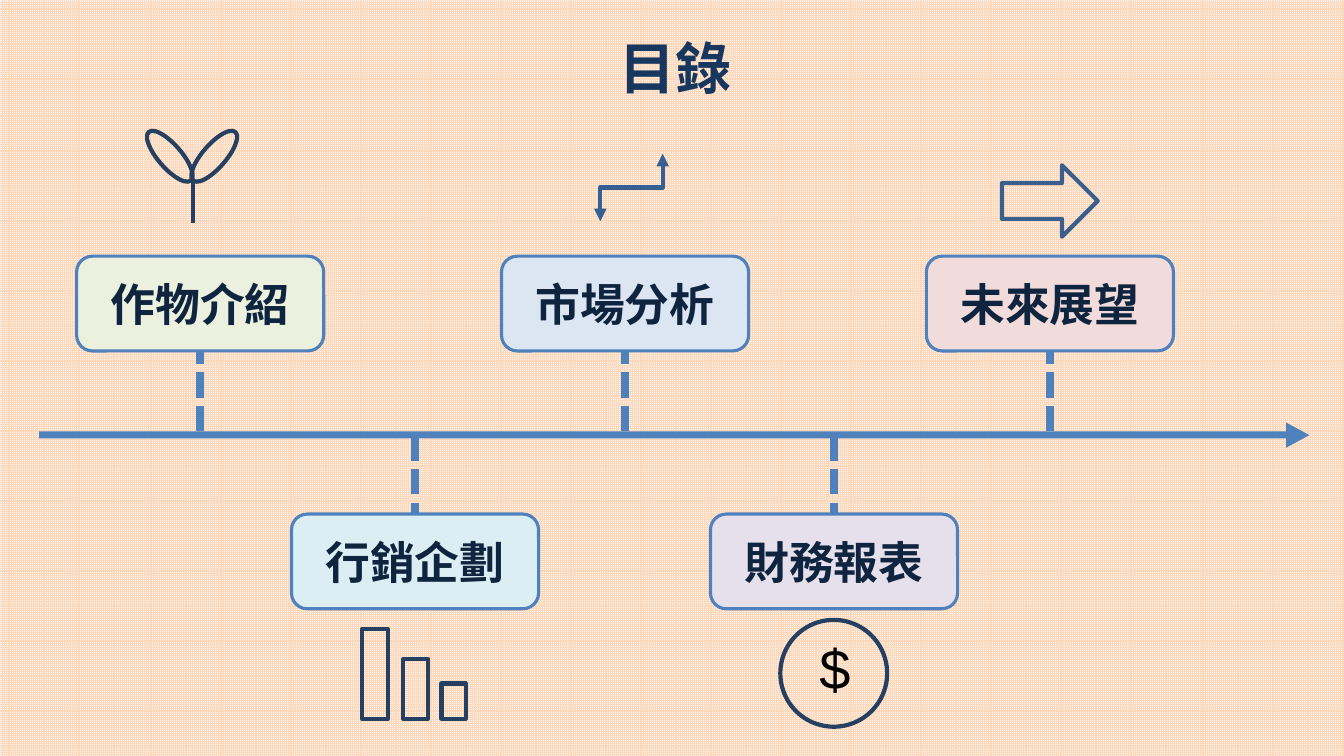
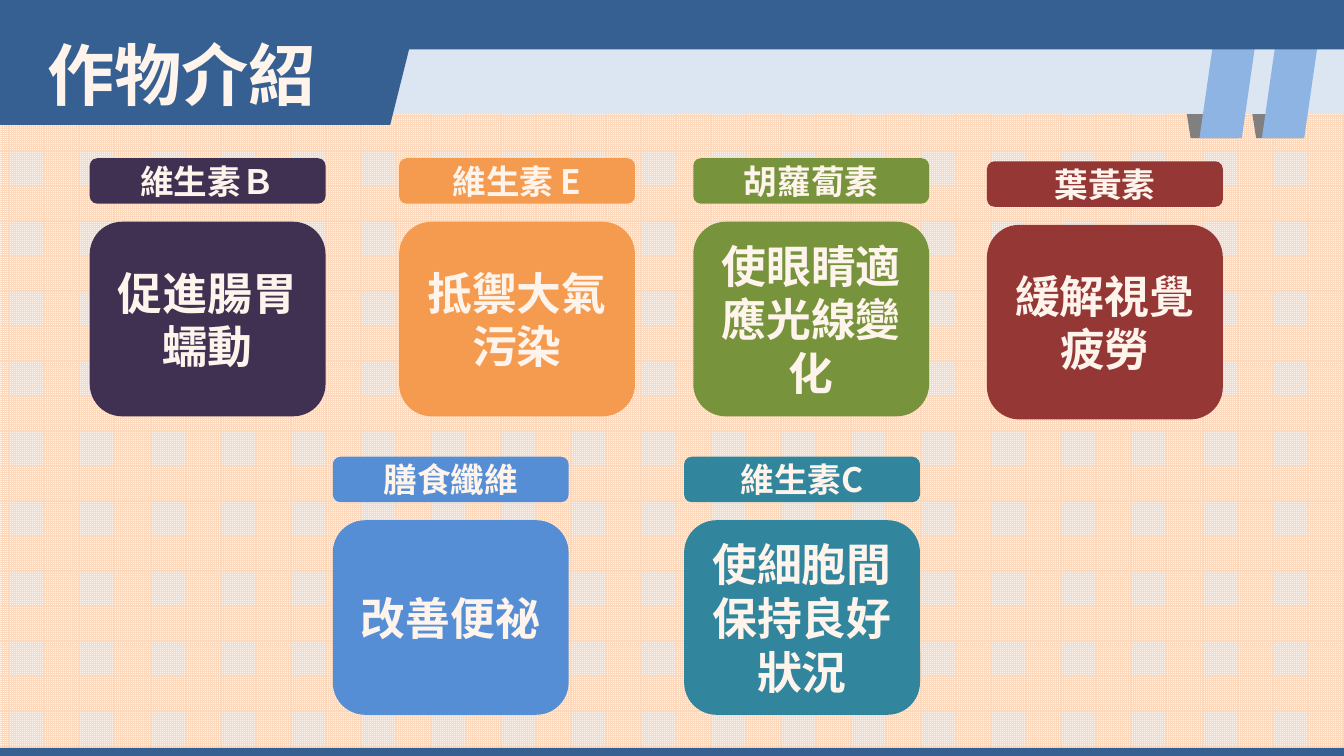
"""Build a contents timeline and a crop introduction slide."""
from dataclasses import dataclass
from lxml.etree import SubElement
from pptx import Presentation
from pptx.dml.color import RGBColor
from pptx.enum.dml import MSO_LINE, MSO_PATTERN
from pptx.enum.shapes import MSO_CONNECTOR, MSO_SHAPE
from pptx.enum.text import MSO_ANCHOR, MSO_AUTO_SIZE, PP_ALIGN
from pptx.oxml.ns import qn
from pptx.util import Pt


@dataclass(frozen=True)
class Theme:
    cjk: str = "Noto Sans CJK SC"
    latin: str = "Arial"
    grid: str = "FCD9BD"
    cream: str = "FEF4EC"
    navy: str = "17375E"
    ink: str = "0F243E"
    black: str = "000000"
    axis: str = "4F81BD"
    icon: str = "254061"
    arrow: str = "3A5F8C"
    band: str = "376092"
    pale: str = "DCE6F2"
    ribbon: str = "8EB4E3"
    fold: str = "808080"
    contents_size: int = 40
    section_size: int = 48
    card_size: int = 32
    tag_size: int = 24
    card_line: float = 2.25
    icon_line: float = 3
    stem_line: float = 6


THEME = Theme()
SLIDE_W, SLIDE_H = 960, 540

CONTENTS = "目錄"
TOPIC_W, TOPIC_H = 176.5, 67.7
TOPIC_ROWS = [
    dict(top=183, left=54.7, step=303.5, axis_y=308, side=2,
         topics=[("作物介紹", "EBF1DE"), ("市場分析", "DCE6F2"), ("未來展望", "F2DCDB")]),
    dict(top=367.2, left=208.2, step=299.3, axis_y=311, side=0,
         topics=[("行銷企劃", "DBEEF4"), ("財務報表", "E6E0EC")]),
]
LEAVES = [(113, 319), (144.7, 41)]
BAR_BASE = 513.4
BARS = [(258.5, 18.7, 64), (288, 18, 42.5), (315.4, 17.3, 25.2)]

SECTION = "作物介紹"
NUTRIENT_W, TAG_H, EFFECT_H, EFFECT_DROP = 168.5, 32.5, 139, 45.4
NUTRIENTS = [
    ("維生素Ｂ", "促進腸胃蠕動", "403152", 64.1, 113),
    ("維生素 E", "抵禦大氣污染", "F59B4F", 285.1, 113),
    ("胡蘿蔔素", "使眼睛適應光線變化", "77933C", 495.2, 113),
    ("葉黃素", "緩解視覺疲勞", "953735", 705, 115.2),
    ("膳食纖維", "改善便祕", "558ED5", 237.7, 326.2),
    ("維生素C", "使細胞間保持良好狀況", "31859C", 488.7, 326.2),
]
FOLDS = (886.3, 839.5)
RIBBONS = (856.8, 901.4)


def assign(target, formats):
    for attribute, setting in formats.items():
        setattr(target, attribute, setting)


def rgb(colour):
    return RGBColor.from_string(colour)


def write(shape, text, size, colour, font=THEME.cjk, bold=True, centred=True):
    if centred:
        frame_format = dict(word_wrap=True, vertical_anchor=MSO_ANCHOR.MIDDLE)
    else:
        frame_format = dict(word_wrap=False, vertical_anchor=MSO_ANCHOR.TOP,
                            auto_size=MSO_AUTO_SIZE.SHAPE_TO_FIT_TEXT)
    assign(shape.text_frame, frame_format)
    paragraph = shape.text_frame.paragraphs[0]
    paragraph.alignment = PP_ALIGN.CENTER if centred else PP_ALIGN.LEFT
    run = paragraph.add_run()
    run.text = text
    assign(run.font, dict(size=Pt(size), bold=bold, name=font))
    run.font.color.rgb = rgb(colour)
    SubElement(run.font._element, qn("a:ea"), typeface=font)


def draw(slide, kind, box, fill=None, line=None, width=THEME.icon_line, rotation=0):
    shape = slide.shapes.add_shape(kind, *map(Pt, box))
    shape.shadow.inherit = False
    shape.rotation = rotation
    if fill:
        shape.fill.solid()
        shape.fill.fore_color.rgb = rgb(fill)
    else:
        shape.fill.background()
    if line:
        shape.line.color.rgb = rgb(line)
        shape.line.width = Pt(width)
    else:
        shape.line.fill.background()
    return shape


def connect(slide, start, end, colour, width, kind=MSO_CONNECTOR.STRAIGHT):
    connector = slide.shapes.add_connector(kind, *map(Pt, start + end))
    connector.line.color.rgb = rgb(colour)
    connector.line.width = Pt(width)
    SubElement(connector._element.spPr, qn("a:effectLst"))
    return connector


def new_slide(deck):
    slide = deck.slides.add_slide(deck.slide_layouts[5])
    backdrop = slide.background.fill
    backdrop.patterned()
    backdrop.pattern = MSO_PATTERN.SMALL_GRID
    backdrop.fore_color.rgb = rgb(THEME.grid)
    backdrop.back_color.rgb = rgb(THEME.cream)
    return slide


def place_title(slide, text, box, size, colour):
    title = slide.shapes.title
    assign(title, dict(zip(("left", "top", "width", "height"), map(Pt, box))))
    write(title, text, size, colour, centred=False)
    slide.shapes.element.append(title.element)


def draw_timeline(slide):
    draw(slide, MSO_SHAPE.RECTANGLE, (28, 308.2, 891.4, 5), THEME.axis)
    draw(slide, MSO_SHAPE.ISOSCELES_TRIANGLE, (918, 302.5, 18, 16.6), THEME.axis, rotation=90)
    for row in TOPIC_ROWS:
        for index, (topic, tint) in enumerate(row["topics"]):
            left = row["left"] + index * row["step"]
            card = draw(slide, MSO_SHAPE.ROUNDED_RECTANGLE, (left, row["top"], TOPIC_W, TOPIC_H),
                        tint, THEME.axis, THEME.card_line)
            write(card, topic, THEME.card_size, THEME.ink)
            start = (left + TOPIC_W / 2, row["axis_y"])
            stem = connect(slide, start, start, THEME.axis, THEME.stem_line)
            stem.line.dash_style = MSO_LINE.SQUARE_DOT
            stem.end_connect(card, row["side"])


def draw_icons(slide):
    for left, angle in LEAVES:
        draw(slide, MSO_SHAPE.OVAL, (left, 88.6, 16.6, 46), line=THEME.icon, rotation=angle)
    connect(slide, (137.6, 159), (137.6, 128), THEME.icon, THEME.icon_line)
    for left, width, height in BARS:
        draw(slide, MSO_SHAPE.RECTANGLE, (left, BAR_BASE - height, width, height), line=THEME.icon)
    draw(slide, MSO_SHAPE.OVAL, (557.4, 442.8, 76.3, 76.3), line=THEME.icon)
    dollar = slide.shapes.add_textbox(*map(Pt, (578.2, 449.3, 35.3, 55.4)))
    write(dollar, "$", THEME.contents_size, THEME.black, THEME.latin, bold=False, centred=False)
    draw(slide, MSO_SHAPE.RIGHT_ARROW, (715.7, 118, 68.4, 51.1), line=THEME.arrow)
    trend = connect(slide, (427, 111.6), (475.2, 156.2), THEME.band, THEME.icon_line,
                    MSO_CONNECTOR.ELBOW)
    trend._element.spPr.find(qn("a:xfrm")).set("rot", "16200000")
    trend_line = trend._element.spPr.find(qn("a:ln"))
    for tip in ("a:headEnd", "a:tailEnd"):
        SubElement(trend_line, qn(tip), type="triangle")


def draw_bands(slide):
    for left in FOLDS:
        fold = draw(slide, MSO_SHAPE.PARALLELOGRAM, (left, 28.8, 44, 69.9), THEME.fold)
        fold._element.spPr.find(qn("a:xfrm")).set("flipH", "1")
    draw(slide, MSO_SHAPE.RECTANGLE, (235, 7.2, SLIDE_W - 235, 74.2), THEME.pale)
    for left in RIBBONS:
        draw(slide, MSO_SHAPE.PARALLELOGRAM, (left, 28.8, 40.3, 69.9), THEME.ribbon)
    draw(slide, MSO_SHAPE.RECTANGLE, (0, 0, SLIDE_W, 35.3), THEME.band)
    draw(slide, MSO_SHAPE.PARALLELOGRAM, (-19.4, 0, 320.4, 89.3), THEME.band)
    draw(slide, MSO_SHAPE.RECTANGLE, (0, 534.2, SLIDE_W, SLIDE_H - 534.2), THEME.band)


def draw_nutrients(slide):
    for nutrient, effect, colour, left, top in NUTRIENTS:
        for text, size, drop, height in (
            (effect, THEME.card_size, EFFECT_DROP, EFFECT_H),
            (nutrient, THEME.tag_size, 0, TAG_H),
        ):
            panel = draw(slide, MSO_SHAPE.ROUNDED_RECTANGLE,
                         (left, top + drop, NUTRIENT_W, height), colour)
            write(panel, text, size, THEME.cream)


def main():
    deck = Presentation()
    assign(deck, dict(slide_width=Pt(SLIDE_W), slide_height=Pt(SLIDE_H)))

    contents = new_slide(deck)
    place_title(contents, CONTENTS, (435.6, 20.2, 95, 55.4), THEME.contents_size, THEME.navy)
    draw_timeline(contents)
    draw_icons(contents)

    crop = new_slide(deck)
    draw_bands(crop)
    place_title(crop, SECTION, (26.6, 20.2, 208, 65.5), THEME.section_size, THEME.cream)
    draw_nutrients(crop)

    deck.save("out.pptx")


if __name__ == "__main__":
    main()
